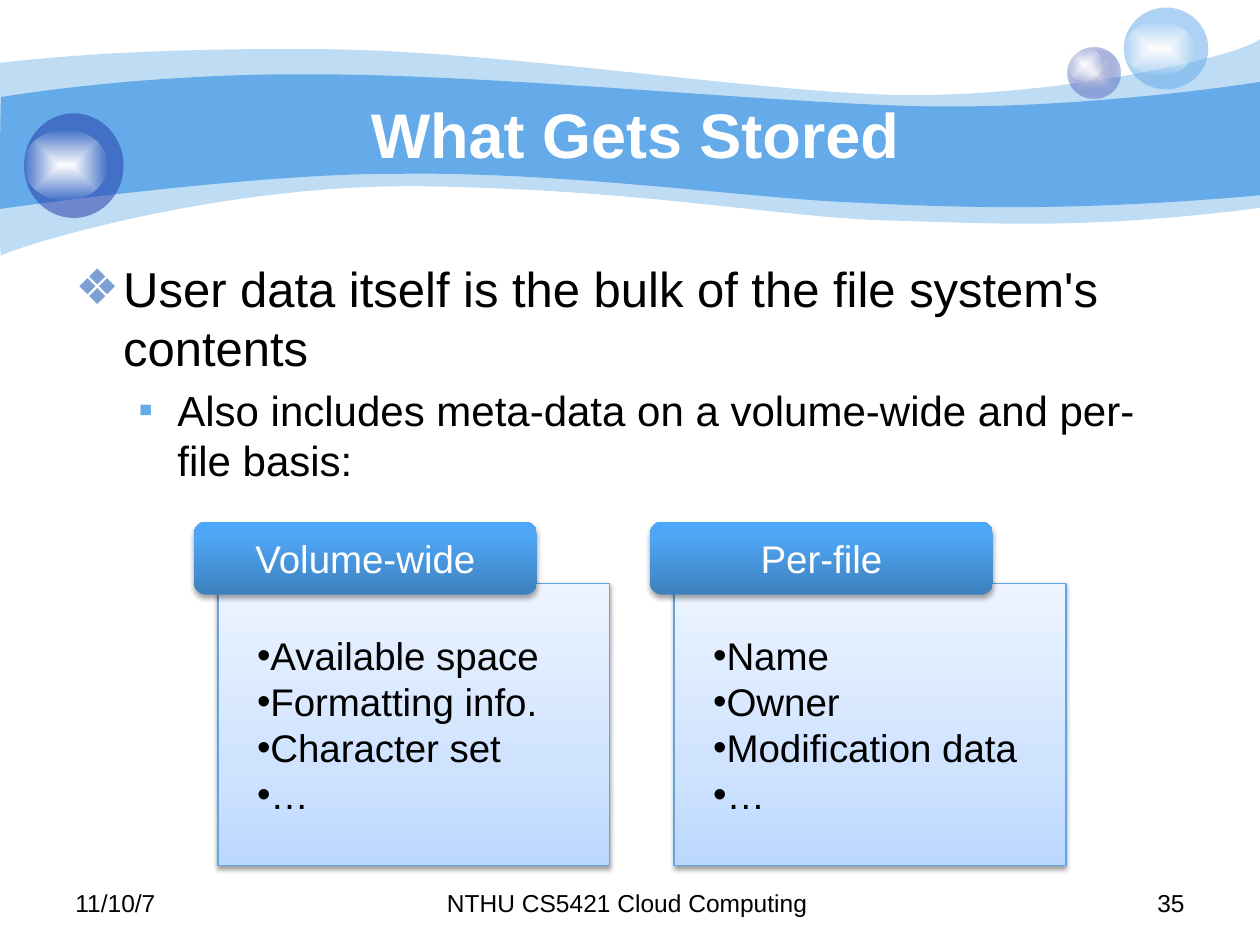
import pptx
import pptx.dml.color
import pptx.enum.shapes
import pptx.enum.text
import pptx.oxml
import pptx.oxml.ns
import pptx.util

Inches = pptx.util.Inches
Pt = pptx.util.Pt
RGBColor = pptx.dml.color.RGBColor
MSO_SHAPE = pptx.enum.shapes.MSO_SHAPE
PP_ALIGN = pptx.enum.text.PP_ALIGN
MSO_ANCHOR = pptx.enum.text.MSO_ANCHOR
qn = pptx.oxml.ns.qn

WHITE = RGBColor(0xFF, 0xFF, 0xFF)
BLACK = RGBColor(0x00, 0x00, 0x00)
SKY = RGBColor(0x65, 0xAA, 0xE9)
NAVY = RGBColor(0x23, 0x3D, 0xA9)
PEARL = RGBColor(0xE1, 0xE2, 0xED)
DIAMOND_BLUE = RGBColor(0x7D, 0xA0, 0xD3)
CARD_LINE = RGBColor(0x60, 0xA6, 0xE7)

# Gradient stops: position %, colour, opacity %
SHINE = [(0, WHITE, 100), (100, WHITE, 0)]
PEARL_GLOW = [(0, PEARL, 100), (100, NAVY, 31)]
CARD_STOPS = [(0, RGBColor(0xBB, 0xD8, 0xFF), 100), (35, RGBColor(0xCF, 0xE3, 0xFF), 100),
              (100, RGBColor(0xED, 0xF4, 0xFF), 100)]
TAB_STOPS = [(0, RGBColor(0x3D, 0x80, 0xBD), 100), (80, RGBColor(0x4F, 0xA6, 0xF5), 100),
             (100, RGBColor(0x4C, 0xA7, 0xF9), 100)]
UPWARD = '<a:lin ang="16200000" scaled="0"/>'
FROM_CENTRE = '<a:path path="shape"><a:fillToRect l="50000" t="50000" r="50000" b="50000"/></a:path>'

# Wave outlines: start point, then curves (two control points and an end) or lines (one point)
PALE_WAVE = [(0, 0.5), (0.24, 0.47, 1.07, 0.38, 2.47, 0.39), (3.86, 0.39, 5.75, 0.7, 6.99, 0.75),
             (8.22, 0.8, 9.8, 0.47, 10, 0.31), (10, 1.65), (8.58, 1.83, 7.87, 1.77, 7.05, 1.75),
             (6.22, 1.73, 5.15, 1.51, 3.43, 1.48), (1.72, 1.44, 0.04, 1.99, 0.01, 2.03),
             (-0.01, 2.08, 0, 0.75, 0, 0.5)]
DEEP_WAVE = [(0.01, 0.77), (0.02, 0.77, 1.1, 0.58, 2.48, 0.59), (3.86, 0.59, 5.95, 0.8, 7.18, 0.84),
             (8.41, 0.88, 9.76, 0.69, 10, 0.65), (10, 1.55), (8.53, 1.68, 7.65, 1.65, 6.82, 1.61),
             (5.99, 1.58, 4.47, 1.36, 3.17, 1.38), (2.03, 1.37, -0.02, 1.66, -0.01, 1.66),
             (0, 1.66, 0, 0.77, 0.01, 0.77)]


def xml(markup):
    head, tail = markup.split(">", 1)
    closing = "/" if head.endswith("/") else ""
    return pptx.oxml.parse_xml(f'{head.rstrip("/")} {pptx.oxml.ns.nsdecls("a")}{closing}>{tail}')


class SlideBuilder:
    font_name = "Arial"

    def __init__(self, slide):
        self.shapes = slide.shapes

    def solid(self, shape, color, opacity=100):
        shape.shadow.inherit = False
        shape.line.fill.background()
        shape.fill.solid()
        shape.fill.fore_color.rgb = color
        if opacity < 100:
            color_tag = shape.element.spPr.find(qn("a:solidFill")).find(qn("a:srgbClr"))
            color_tag.append(xml(f'<a:alpha val="{opacity * 1000}"/>'))

    def gradient(self, shape, stops, direction):
        self.solid(shape, WHITE)
        stop_tags = "".join(
            f'<a:gs pos="{pos * 1000}"><a:srgbClr val="{color}"><a:alpha val="{opacity * 1000}"/>'
            f'</a:srgbClr></a:gs>' for pos, color, opacity in stops)
        properties = shape.element.spPr
        properties.replace(properties.find(qn("a:solidFill")), xml(
            f'<a:gradFill rotWithShape="1"><a:gsLst>{stop_tags}</a:gsLst>{direction}</a:gradFill>'))

    def drop_shadow(self, shape, opacity, distance):
        shape.element.spPr.find(qn("a:effectLst")).append(xml(
            f'<a:outerShdw blurRad="{Pt(3.1)}" dist="{Pt(distance)}" dir="5400000" rotWithShape="0">'
            f'<a:srgbClr val="{BLACK}"><a:alpha val="{opacity * 1000}"/></a:srgbClr></a:outerShdw>'))

    def shape(self, kind, left, top, width, height):
        return self.shapes.add_shape(kind, Inches(left), Inches(top), Inches(width), Inches(height))

    def wave(self, outline, color, opacity=100):
        corners = [(Inches(part[-2]), Inches(part[-1])) for part in outline]
        builder = self.shapes.build_freeform(*corners[0])
        builder.add_line_segments(corners[1:], close=True)
        wave = builder.convert_to_shape()
        self.solid(wave, color, opacity)
        # Bend each side that has control points
        sides = list(wave.element.spPr.iter(qn("a:lnTo")))
        for side, part in zip(sides, outline[1:]):
            if len(part) == 6:
                points = "".join(f'<a:pt x="{Inches(x) - wave.left}" y="{Inches(y) - wave.top}"/>'
                                 for x, y in zip(part[::2], part[1::2]))
                side.getparent().replace(side, xml(f"<a:cubicBezTo>{points}</a:cubicBezTo>"))

    def bubble(self, ball_at, shine_at, color=None, opacity=100):
        ball = self.shape(MSO_SHAPE.OVAL, *ball_at)
        if color is None:
            self.gradient(ball, PEARL_GLOW, FROM_CENTRE)
        else:
            self.solid(ball, color, opacity)
        self.gradient(self.shape(MSO_SHAPE.OVAL, *shine_at), SHINE, FROM_CENTRE)

    def paragraph(self, paragraph, text, size, color=BLACK, align=PP_ALIGN.LEFT, bold=False,
                  bullet=None, bullet_color=None, margin=0, indent=0):
        paragraph.text = text
        paragraph.alignment = align
        if bullet:
            properties = paragraph._p.get_or_add_pPr()
            properties.set("marL", str(Inches(margin)))
            properties.set("indent", str(Inches(indent)))
            if bullet_color is not None:
                properties.append(xml(f'<a:buClr><a:srgbClr val="{bullet_color}"/></a:buClr>'))
            properties.append(xml(f'<a:buFont typeface="{self.font_name}"/>'))
            properties.append(xml(f'<a:buChar char="{bullet}"/>'))
        font = paragraph.font
        font.name, font.size, font.bold = self.font_name, Pt(size), bold
        font.color.rgb = color

    def text(self, left, top, width, height, text, size, anchor=MSO_ANCHOR.TOP, **style):
        box = self.shapes.add_textbox(Inches(left), Inches(top), Inches(width), Inches(height))
        frame = box.text_frame
        frame.word_wrap = True
        frame.vertical_anchor = anchor
        self.paragraph(frame.paragraphs[0], text, size, **style)
        return frame

    def card(self, left, top, heading, items):
        panel = self.shape(MSO_SHAPE.RECTANGLE, left + 0.19, top + 0.49, 3.11, 2.24)
        self.gradient(panel, CARD_STOPS, UPWARD)
        panel.line.color.rgb = CARD_LINE
        panel.line.width = Pt(0.75)
        self.drop_shadow(panel, 38, 1.6)
        frame = panel.text_frame
        frame.margin_left = Inches(0.31)
        frame.vertical_anchor = MSO_ANCHOR.MIDDLE
        for number, item in enumerate(items):
            line = frame.add_paragraph() if number else frame.paragraphs[0]
            self.paragraph(line, item, 22, bullet="•", indent=-0.2)

        tab = self.shape(MSO_SHAPE.ROUNDED_RECTANGLE, left, top, 2.72, 0.58)
        self.gradient(tab, TAB_STOPS, UPWARD)
        self.drop_shadow(tab, 35, 1.8)
        tab.text_frame.vertical_anchor = MSO_ANCHOR.MIDDLE
        self.paragraph(tab.text_frame.paragraphs[0], heading, 22, WHITE, PP_ALIGN.CENTER)


def main():
    deck = pptx.Presentation()
    deck.slide_width, deck.slide_height = Inches(10), Inches(7.5)
    page = SlideBuilder(deck.slides.add_slide(deck.slide_layouts[6]))

    # Banner waves and bubbles
    page.wave(PALE_WAVE, SKY, 41)
    page.wave(DEEP_WAVE, SKY)
    page.bubble((8.47, 0.38, 0.42, 0.4), (8.47, 0.38, 0.28, 0.27))
    page.bubble((8.92, 0.06, 0.67, 0.65), (8.92, 0.17, 0.56, 0.43), SKY, 53)
    page.bubble((0.19, 0.9, 0.79, 0.83), (0.19, 1.03, 0.66, 0.56), NAVY, 53)

    # Title and body
    page.text(1, 0.75, 8.08, 0.62, "What Gets Stored", 36, anchor=MSO_ANCHOR.MIDDLE,
              color=WHITE, align=PP_ALIGN.CENTER, bold=True)
    body = page.text(0.5, 2, 9, 4.92, "User data itself is the bulk of the file system's contents", 28,
                     bullet="❖", bullet_color=DIAMOND_BLUE, margin=0.38, indent=-0.38)
    detail = body.add_paragraph()
    detail.level = 1
    page.paragraph(detail, "Also includes meta-data on a volume-wide and per-file basis:", 24,
                   bullet="▪", bullet_color=SKY, margin=0.81, indent=-0.31)
    detail.space_before = Pt(4.8)

    # Metadata cards
    cards = {"Volume-wide": ["Available space", "Formatting info.", "Character set", "…"],
             "Per-file": ["Name", "Owner", "Modification data", "…"]}
    for column, (heading, items) in enumerate(cards.items()):
        page.card(1.54 + 3.62 * column, 4.14, heading, items)

    # Footer
    page.text(0.5, 7, 2.33, 0.35, "11/10/7", 14)
    page.text(3.42, 7, 3.17, 0.35, "NTHU CS5421 Cloud Computing ", 14, align=PP_ALIGN.CENTER)
    page.text(7.17, 7, 2.33, 0.35, "35", 14, align=PP_ALIGN.RIGHT)

    deck.save("out.pptx")


if __name__ == "__main__":
    main()
